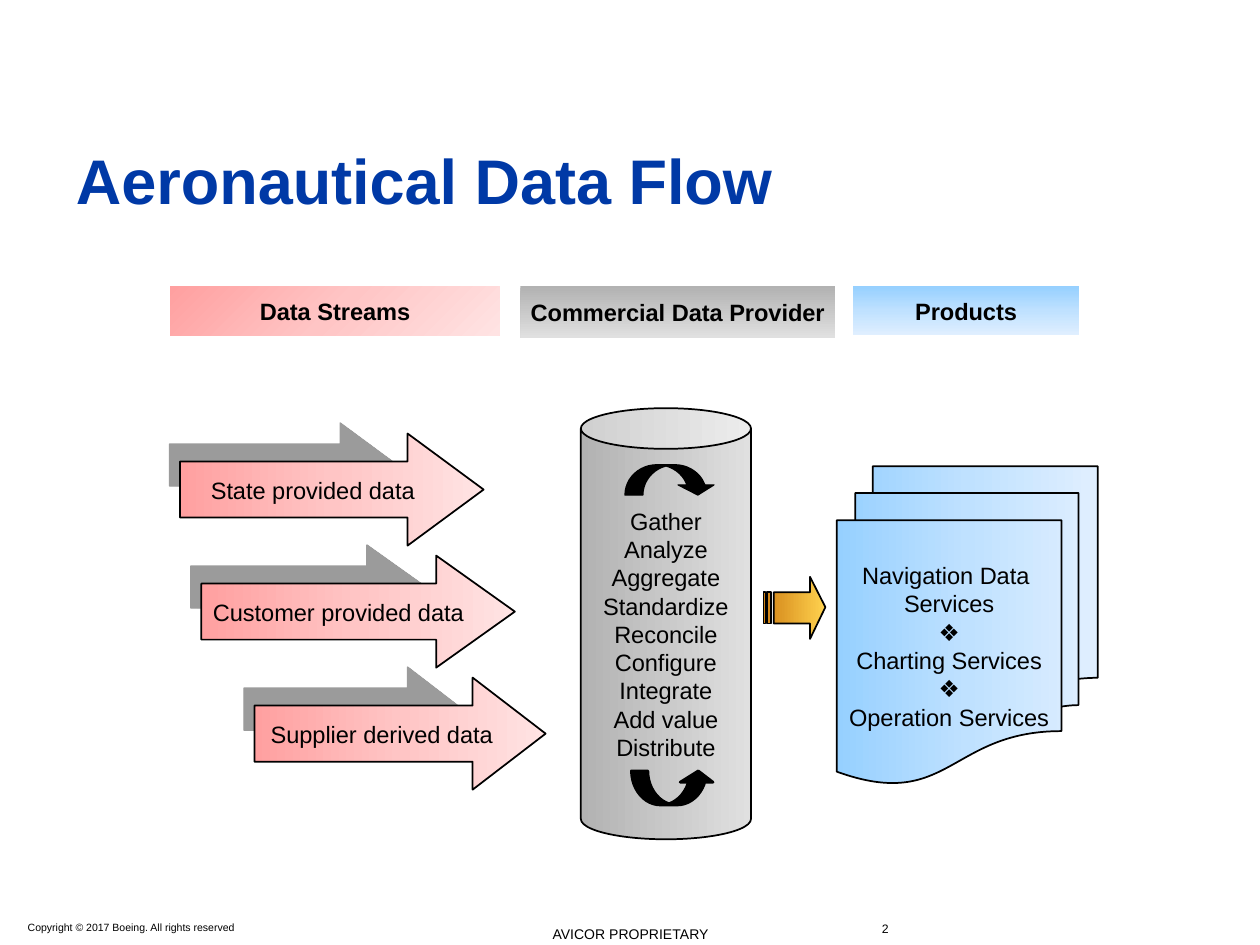
"""Build the Aeronautical Data Flow slide."""
from copy import deepcopy

from lxml import etree
from pptx import Presentation
from pptx import util as u
from pptx.dml.color import RGBColor
from pptx.enum import shapes, text
from pptx.oxml.ns import qn

BLACK = RGBColor(0, 0, 0)
NAVY = RGBColor(0x00, 0x39, 0xA6)
SHADOW = RGBColor(0x39, 0x39, 0x39)
REDS = [RGBColor(0xFF, 0xA0, 0xA0), RGBColor(0xFF, 0xC5, 0xC5), RGBColor(0xFF, 0xE3, 0xE3)]
BLUES = [RGBColor(0x96, 0xD0, 0xFF), RGBColor(0xBF, 0xE1, 0xFF), RGBColor(0xE0, 0xEF, 0xFF)]
GREYS = [RGBColor(0xB2, 0xB2, 0xB2), RGBColor(0xE0, 0xE0, 0xE0)]
GOLDS = [RGBColor(0xD1, 0x83, 0x16), RGBColor(0xFF, 0xD2, 0x4F)]
MSO = shapes.MSO_SHAPE
LEFT, CENTER = text.PP_ALIGN.LEFT, text.PP_ALIGN.CENTER
TOP, MIDDLE = text.MSO_ANCHOR.TOP, text.MSO_ANCHOR.MIDDLE


def write(tf, words, size=13.5, bold=False, color=BLACK, align=CENTER,
          anchor=MIDDLE, wrap=False, inset=(0.25, 0.13), spacing=None):
    tf.word_wrap = wrap
    tf.vertical_anchor = anchor
    tf.margin_left = tf.margin_right = u.Cm(inset[0])
    tf.margin_top = tf.margin_bottom = u.Cm(inset[1])
    tf.text = words
    for p in tf.paragraphs:
        p.alignment = align
        p.line_spacing = spacing
        for r in p.runs:
            r.font.name = "Arial"
            r.font.size = u.Pt(size)
            r.font.bold = bold
            r.font.color.rgb = color


def paint(sp, colors, angle=0, line=None):
    sp.shadow.inherit = False
    if len(colors) == 1:
        sp.fill.solid()
        sp.fill.fore_color.rgb = colors[0]
    else:
        sp.fill.gradient()
        sp.fill.gradient_angle = -angle % 360
        stops = sp._element.spPr.find(".//" + qn("a:gsLst"))
        for _ in colors[2:]:
            stops.append(deepcopy(stops[0]))
        for i, (stop, color) in enumerate(zip(sp.fill.gradient_stops, colors)):
            stop.position = i / (len(colors) - 1)
            stop.color.rgb = color
    if line:
        sp.line.color.rgb = BLACK
        sp.line.width = u.Pt(line)
    else:
        sp.line.fill.background()


prs = Presentation()
prs.slide_width, prs.slide_height = u.Cm(25.4), u.Cm(19.05)
s = prs.slides.add_slide(prs.slide_layouts[0])
subtitle = s.placeholders[1].element
subtitle.getparent().remove(subtitle)

title = s.shapes.title
title.left, title.top, title.width, title.height = map(u.Cm, (1.35, 2.92, 19.56, 1.57))
write(title.text_frame, "Aeronautical Data Flow", size=36, bold=True, color=NAVY,
      align=LEFT, anchor=TOP, wrap=True, inset=(0.18, 0.1), spacing=0.9)
title.text_frame.auto_size = text.MSO_AUTO_SIZE.SHAPE_TO_FIT_TEXT

for words, box, size, align, inset in [
    ("Copyright © 2017 Boeing. All rights reserved", (0.53, 18.54, 7.44, 0.3), 6, LEFT, (0.03, 0.03)),
    ("2", (17.75, 18.54, 6.96, 0.61), 7, LEFT, (0.03, 0.03)),
    ("AVICOR PROPRIETARY", (8.56, 18.52, 8.31, 0.48), 8, CENTER, (0.25, 0.13)),
]:
    tb = s.shapes.add_textbox(*map(u.Cm, box))
    write(tb.text_frame, words, size=size, align=align, anchor=TOP, wrap=True, inset=inset)

for words, left, width, height, colors, angle in [
    ("Data Streams", 3.43, 6.65, 0.99, REDS, 45),
    ("Commercial Data Provider", 10.49, 6.35, 1.04, GREYS, 90),
    ("Products", 17.2, 4.55, 0.99, BLUES, 90),
]:
    sp = s.shapes.add_shape(MSO.RECTANGLE, *map(u.Cm, (left, 5.77, width, height)))
    paint(sp, colors, angle)
    write(sp.text_frame, words, bold=True)

can = s.shapes.add_shape(MSO.CAN, *map(u.Cm, (11.71, 8.23, 3.43, 8.69)))
can.adjustments[0] = 0.239
paint(can, GREYS, line=1)
write(can.text_frame, "Gather\nAnalyze\nAggregate\nStandardize\nReconcile\n"
      "Configure\nIntegrate\nAdd value\nDistribute")

docs = s.shapes.add_shape(MSO.FLOWCHART_MULTIDOCUMENT, *map(u.Cm, (16.87, 9.4, 5.26, 6.4)))
paint(docs, BLUES, line=1)
write(docs.text_frame, "Navigation Data \nServices\n❖\nCharting Services\n❖\nOperation Services")

for i, (words, left, width, head) in enumerate([
    ("State provided data", 3.63, 6.12, 0.678),
    ("Customer provided data", 4.06, 6.32, 0.702),
    ("Supplier derived data", 5.13, 5.87, 0.651),
]):
    sp = s.shapes.add_shape(MSO.RIGHT_ARROW, *map(u.Cm, (left, 8.74 + 2.46 * i, width, 2.26)))
    sp.adjustments[1] = head
    paint(sp, REDS, line=1)
    effects = sp._element.spPr.find(qn("a:effectLst"))
    shadow = etree.SubElement(effects, qn("a:outerShdw"), dist=str(u.Pt(8.5)), dir="13500000",
                              sx="75000", sy="75000", algn="tl", rotWithShape="0")
    tint = etree.SubElement(shadow, qn("a:srgbClr"), val=str(SHADOW))
    etree.SubElement(tint, qn("a:alpha"), val="50000")
    write(sp.text_frame, words)

fb = s.shapes.build_freeform(1633, 1163, scale=u.Cm(0.01))
fb.add_line_segments([(1633, 1194), (1560, 1194), (1560, 1257),
                      (1633, 1257), (1633, 1288), (1664, 1224)])
for x1, x2 in [(1547, 1554), (1539, 1543)]:
    fb.move_to(x1, 1194)
    fb.add_line_segments([(x1, 1257), (x2, 1257), (x2, 1194)])
paint(fb.convert_to_shape(), GOLDS, line=1)

for kind, box, adjustments, line in [
    (MSO.CURVED_UP_ARROW, (12.73, 15.54, 1.68, 0.69), (0.482, 0.964, 0.333), 1.5),
    (MSO.CURVED_DOWN_ARROW, (12.6, 9.37, 1.83, 0.61), (0.591, 1.183, 0.333), 0.75),
]:
    sp = s.shapes.add_shape(kind, *map(u.Cm, box))
    for i, value in enumerate(adjustments):
        sp.adjustments[i] = value
    paint(sp, [BLACK], line=line)

prs.save("out.pptx")
